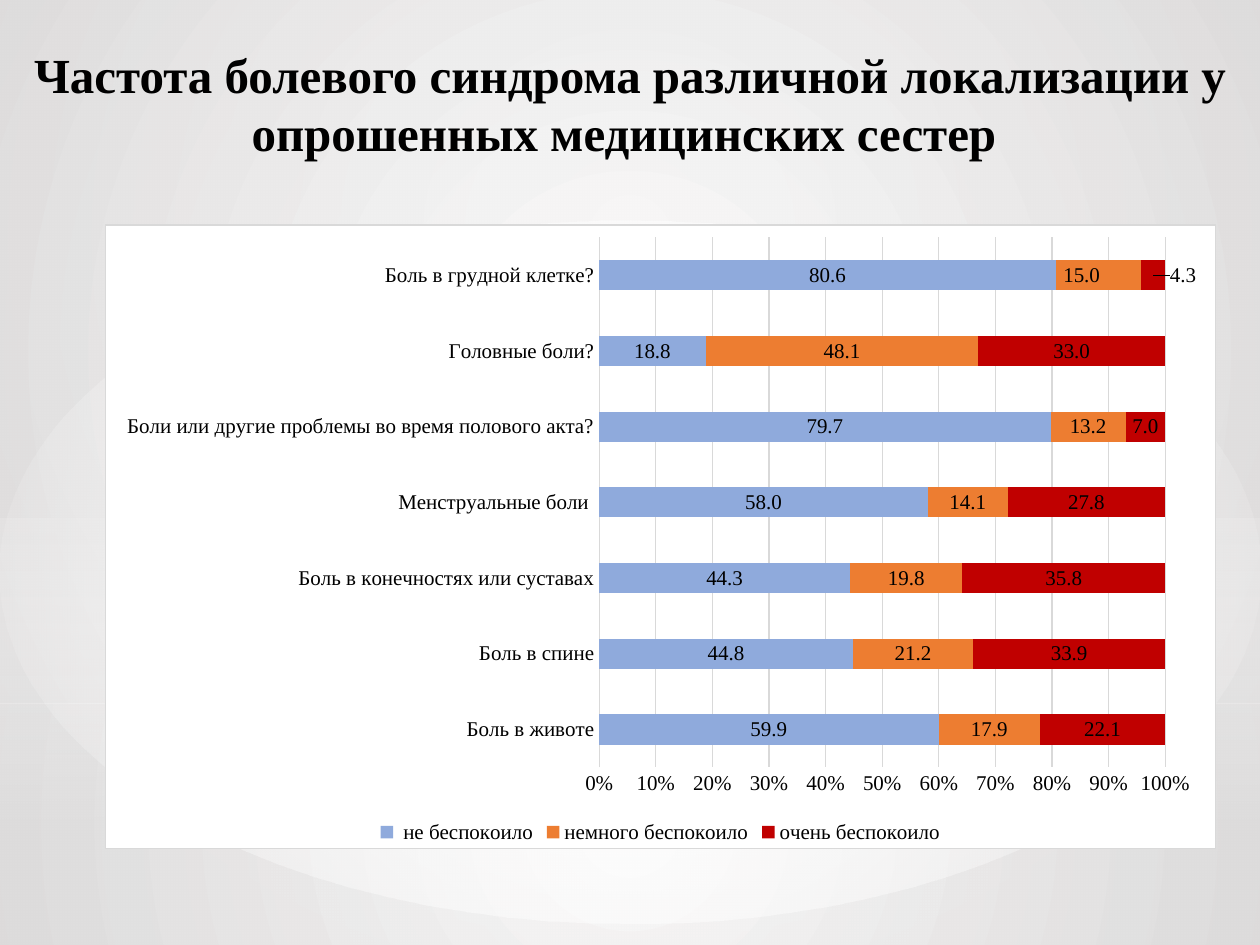
from lxml import etree
from pptx import Presentation
from pptx.chart.data import CategoryChartData
from pptx.dml.color import RGBColor
from pptx.enum.chart import XL_CHART_TYPE, XL_LABEL_POSITION, XL_LEGEND_POSITION, XL_TICK_MARK
from pptx.enum.shapes import MSO_SHAPE
from pptx.enum.text import MSO_ANCHOR, MSO_AUTO_SIZE, PP_ALIGN
from pptx.oxml import parse_xml
from pptx.oxml.ns import qn
from pptx.util import Pt

RECT, OVAL = MSO_SHAPE.RECTANGLE, MSO_SHAPE.OVAL
BARS = XL_CHART_TYPE.BAR_STACKED_100
MID = XL_LABEL_POSITION.CENTER
LOW = XL_LEGEND_POSITION.BOTTOM
NONE = XL_TICK_MARK.NONE
A = "http://schemas.openxmlformats.org/drawingml/2006/main"
C = "http://schemas.openxmlformats.org/drawingml/2006/chart"
FACE = "Times New Roman"
FORM = "#,##0.0"
GREY = "D9D9D9"


def hue(code):
    return RGBColor.from_string(code)


def blend(fill, host, stops, shade):
    fill.solid()
    marks = "".join(
        f'<a:gs pos="{pos * 1000}"><a:srgbClr val="{code}">'
        f'<a:alpha val="{alpha * 1000}"/></a:srgbClr></a:gs>'
        for pos, (code, alpha) in zip((0, 100), stops))
    solid = host.find(qn("a:solidFill"))
    host.replace(solid, parse_xml(
        f'<a:gradFill xmlns:a="{A}" rotWithShape="1"><a:gsLst>{marks}</a:gsLst>{shade}</a:gradFill>'))


ROUND = ('<a:path path="circle"><a:fillToRect l="50000" t="{}" r="50000" b="{}"/></a:path>')
CORE = ROUND.format(50000, 50000)
DOWN = '<a:lin ang="5400000" scaled="0"/>'

deck = Presentation()
deck.slide_width, deck.slide_height = Pt(720), Pt(540)
slide = deck.slides.add_slide(deck.slide_layouts[5])

back = slide.background.fill
back.solid()
blend(back, slide.element.find(".//" + qn("p:bgPr")),
      [("DDDCDC", 100), ("BAB6B6", 100)], ROUND.format(25000, 75000))

layers = [
    (RECT, 401.8, 138.2, [("FFFFFF", 91), ("E7E6E6", 79)], CORE),
    (RECT, 0, 401.8, [("FFFFFF", 89), ("E7E6E6", 79)], CORE),
    (RECT, 296.6, 180, [("E7E6E6", 60), ("FFFFFF", 0)], DOWN),
    (OVAL, 126, 401.8, [("FFFFFF", 100), ("FFFFFF", 0)], CORE),
]
title = slide.shapes.title
for kind, top, height, stops, shade in layers:
    layer = slide.shapes.add_shape(kind, 0, Pt(top), Pt(720), Pt(height))
    layer.shadow.inherit = False
    layer.line.fill.background()
    blend(layer.fill, layer.element.spPr, stops, shade)
    title.element.addprevious(layer.element)

title.left, title.top, title.width, title.height = Pt(0), Pt(21.6), Pt(720), Pt(74.2)
frame = title.text_frame
frame.text = "Частота болевого синдрома различной локализации у опрошенных медицинских сестер "
look = {"word_wrap": True, "auto_size": MSO_AUTO_SIZE.NONE, "vertical_anchor": MSO_ANCHOR.TOP}
for name, value in look.items():
    setattr(frame, name, value)
line = frame.paragraphs[0]
line.alignment = PP_ALIGN.CENTER
font = line.runs[0].font
for name, value in {"name": FACE, "size": Pt(28), "bold": True}.items():
    setattr(font, name, value)
font.color.rgb = hue("000000")

data = CategoryChartData(number_format=FORM)
data.categories = [
    "Боль в животе", "Боль в спине", "Боль в конечностях или суставах",
    "Менструальные боли ", "Боли или другие проблемы во время полового акта?",
    "Головные боли?", "Боль в грудной клетке?"]
rows = [
    (" не беспокоило", "8FAADC", [59.9, 44.8, 44.3, 58, 79.7, 18.8, 80.6]),
    ("немного беспокоило", "ED7D31", [17.9, 21.2, 19.8, 14.1, 13.2, 48.1, 15]),
    ("очень беспокоило", "C00000", [22.1, 33.9, 35.8, 27.8, 7, 33, 4.3]),
]
for name, code, values in rows:
    data.add_series(name, values)
chart = slide.shapes.add_chart(BARS, Pt(59.8), Pt(128.2), Pt(635), Pt(357), data).chart
chart.has_title = False
chart.has_legend = True
chart.legend.position = LOW
chart.legend.include_in_layout = False
plot = chart.plots[0]
plot.gap_width, plot.overlap = 150, 100
plot.vary_by_categories = False

cats, vals = chart.category_axis, chart.value_axis
for axis in (cats, vals):
    axis.major_tick_mark = axis.minor_tick_mark = NONE
vals.tick_labels.number_format = "0%"
vals.tick_labels.number_format_is_linked = False
vals.maximum_scale, vals.major_unit = 1, 0.1
vals.format.line.fill.background()
vals.has_major_gridlines = True
for rule in (cats.format.line, vals.major_gridlines.format.line):
    rule.color.rgb = hue(GREY)
    rule.width = Pt(0.75)

fonts = [chart.font, chart.legend.font, cats.tick_labels.font, vals.tick_labels.font]
for series, (name, code, values) in zip(plot.series, rows):
    series.format.fill.solid()
    series.format.fill.fore_color.rgb = hue(code)
    labels = series.data_labels
    form = {"show_value": True, "position": MID, "number_format": FORM,
            "number_format_is_linked": False}
    for key, value in form.items():
        setattr(labels, key, value)
    fonts.append(labels.font)

area = chart.element.find(".//" + qn("c:plotArea"))
places = [(area, 0, {"layoutTarget": "inner", "xMode": "edge", "yMode": "edge",
                     "x": 0.445, "y": 0.02, "w": 0.51, "h": 0.85})]
for index, shift in ((1, -0.015), (2, 0.027)):
    label = plot.series[index].points[6].data_label
    label.position = MID
    fonts.append(label.font)
    node = plot.series[index].data_labels._element.find(qn("c:dLbl"))
    node.find(qn("c:idx")).addnext(parse_xml(
        f'<c:numFmt xmlns:c="{C}" formatCode="{FORM}" sourceLinked="0"/>'))
    places.append((node, 1, {"x": shift, "y": 0}))

for font in fonts:
    font.name, font.size = FACE, Pt(12)
    font.color.rgb = hue("000000")

for host, spot, values in places:
    for old in host.findall(qn("c:layout")):
        host.remove(old)
    box = etree.Element(qn("c:layout"))
    manual = etree.SubElement(box, qn("c:manualLayout"))
    for key, value in values.items():
        etree.SubElement(manual, qn("c:" + key)).set("val", str(value))
    host.insert(spot, box)

chart.element.find(qn("c:chart")).addnext(parse_xml(
    f'<c:spPr xmlns:c="{C}" xmlns:a="{A}"><a:solidFill><a:srgbClr val="FFFFFF"/></a:solidFill>'
    f'<a:ln w="9525"><a:solidFill><a:srgbClr val="{GREY}"/></a:solidFill></a:ln></c:spPr>'))

deck.save("out.pptx")
